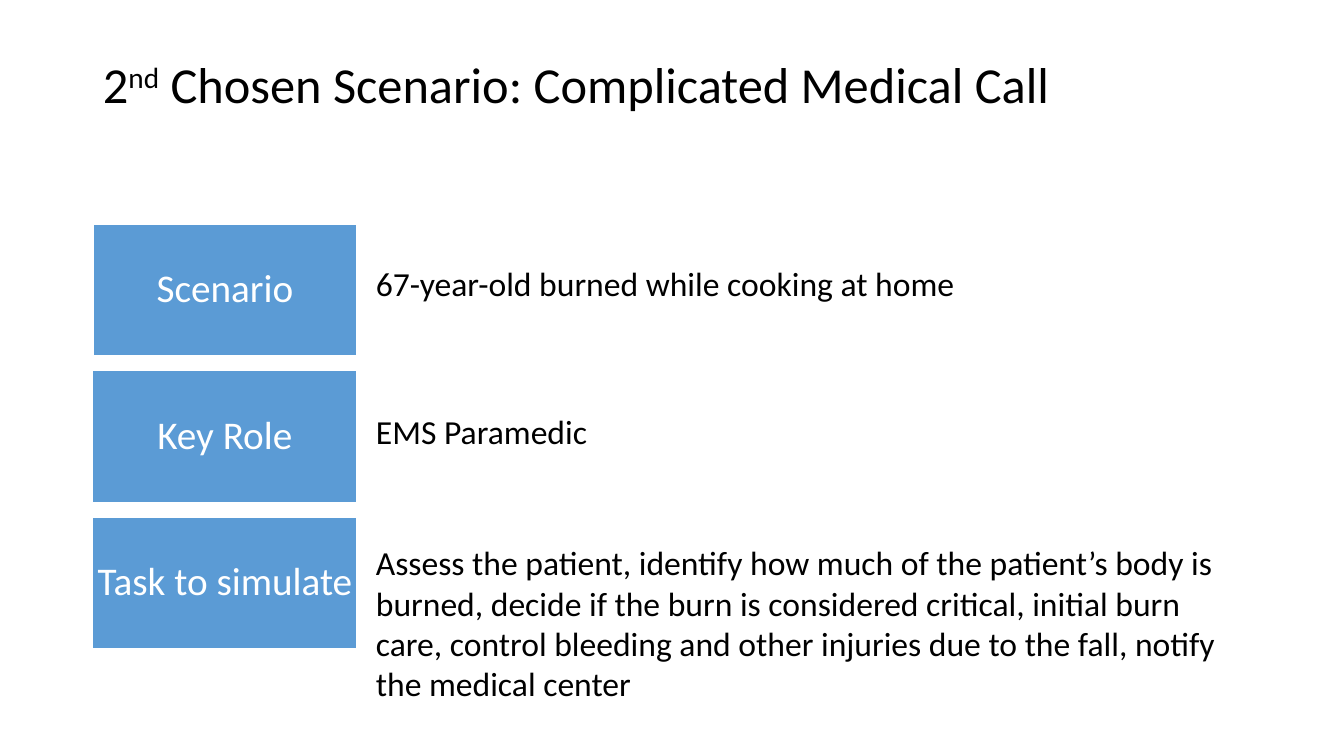
from dataclasses import dataclass

from pptx import Presentation
from pptx.dml.color import RGBColor
from pptx.enum.shapes import MSO_SHAPE as Shape
from pptx.enum.text import MSO_ANCHOR as Anchor, MSO_AUTO_SIZE as Fit, PP_ALIGN as Align
from pptx.slide import Slide
from pptx.text.text import Font
from pptx.util import Inches, Pt

BLACK, WHITE, BLUE = "000000", "FFFFFF", "5B9BD5"
LEFT, TOP, STEP = 0.92, 2.22, 1.455
BOX_W, BOX_H = 2.62, 1.31
NOTE_LEFT = 3.63


@dataclass
class Row:
    label: str
    note: str
    top: float
    width: float
    height: float = 0.5
    wrap: bool = False
    edge: float = 1


ROWS = [
    Row("Scenario", "67-year-old burned while cooking at home", 2.56, 6.01, edge=1.5),
    Row("Key Role", "EMS Paramedic", 4.03, 2.32),
    Row(
        "Task to simulate",
        "Assess the patient, identify how much of the patient’s body is burned, "
        "decide if the burn is considered critical, initial burn care, control "
        "bleeding and other injuries due to the fall, notify the medical center",
        5.33, 8.91, 1.72, wrap=True,
    ),
]


def color(code: str) -> RGBColor:
    return RGBColor.from_string(code)


def style(font: Font, size: float, code: str) -> None:
    font.name = "Calibri"
    font.size = Pt(size)
    font.color.rgb = color(code)


def add_title(slide: Slide) -> None:
    title = slide.shapes.title
    title.left, title.top = Inches(LEFT), Inches(0.4)
    title.width, title.height = Inches(11.5), Inches(0.93)
    frame = title.text_frame
    frame.vertical_anchor = Anchor.MIDDLE
    para = frame.paragraphs[0]
    para.alignment = Align.LEFT
    para.line_spacing = 0.9
    for text, base in (("2", 0), ("nd", 30000), (" Chosen Scenario: Complicated Medical Call", 0)):
        run = para.add_run()
        run.text = text
        style(run.font, 36, BLACK)
        if base:
            run._r.get_or_add_rPr().set("baseline", str(base))


def add_label(slide: Slide, row: Row, top: float) -> None:
    box = slide.shapes.add_shape(
        Shape.RECTANGLE, Inches(LEFT), Inches(top), Inches(BOX_W), Inches(BOX_H)
    )
    box.shadow.inherit = False
    box.fill.solid()
    box.fill.fore_color.rgb = color(BLUE)
    box.line.color.rgb = color(WHITE)
    box.line.width = Pt(row.edge)
    frame = box.text_frame
    frame.text = row.label
    frame.word_wrap = True
    frame.vertical_anchor = Anchor.MIDDLE
    frame.margin_left = frame.margin_right = Inches(0.03)
    frame.margin_top = frame.margin_bottom = Inches(0.03)
    para = frame.paragraphs[0]
    para.alignment = Align.CENTER
    para.line_spacing = 0.9
    style(para.runs[0].font, 28, WHITE)


def add_note(slide: Slide, row: Row) -> None:
    box = slide.shapes.add_textbox(
        Inches(NOTE_LEFT), Inches(row.top), Inches(row.width), Inches(row.height)
    )
    frame = box.text_frame
    frame.text = row.note
    frame.word_wrap = row.wrap
    frame.auto_size = Fit.SHAPE_TO_FIT_TEXT
    style(frame.paragraphs[0].runs[0].font, 24, BLACK)


def main() -> None:
    deck = Presentation()
    deck.slide_width, deck.slide_height = Inches(13.33), Inches(7.5)
    slide = deck.slides.add_slide(deck.slide_layouts.get_by_name("Title Only"))
    add_title(slide)
    for i, row in enumerate(ROWS):
        add_label(slide, row, TOP + i * STEP)
        add_note(slide, row)
    deck.save("out.pptx")


if __name__ == "__main__":
    main()
